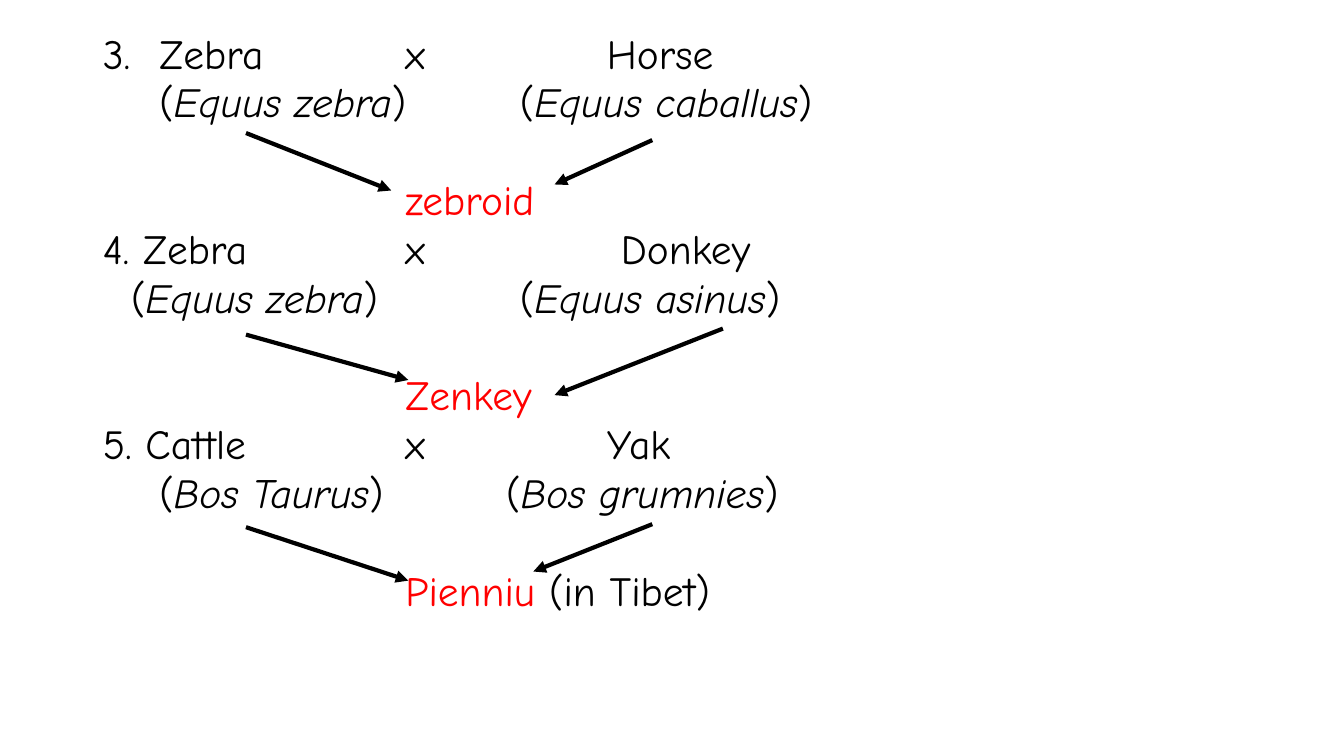
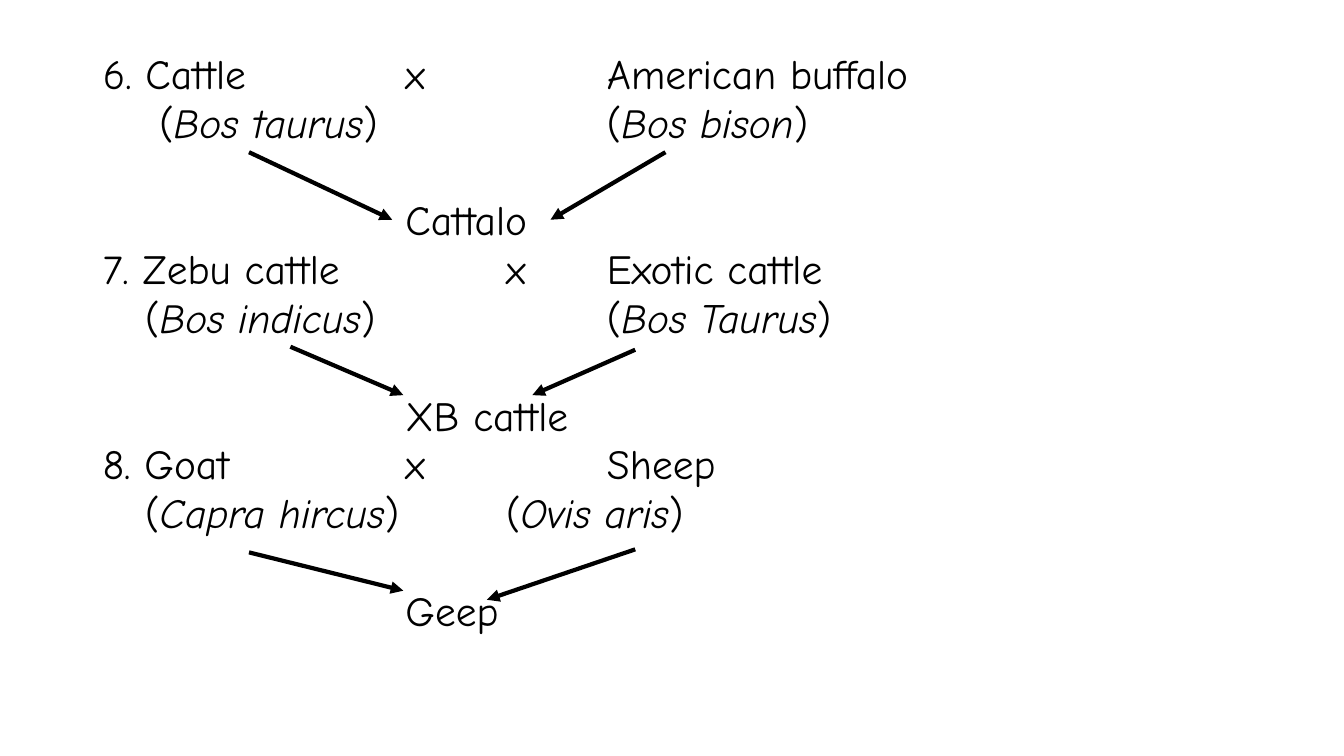
from dataclasses import dataclass

from lxml.etree import SubElement
from pptx import Presentation
from pptx.dml.color import RGBColor
from pptx.enum.shapes import MSO_CONNECTOR
from pptx.enum.text import MSO_ANCHOR, MSO_AUTO_SIZE
from pptx.oxml.ns import qn
from pptx.util import Inches, Pt


@dataclass(frozen=True)
class Theme:
    face: str = "Comic Neue"
    size: float = 29.6
    ink: str = "000000"
    red: str = "FF0000"
    width: float = 3
    lines: float = 0.7
    gap: float = 10
    drop: float = 44.9
    hang: float = 0.56
    tab: float = 1


def apply(item, values):
    for key, value in values.items():
        setattr(item, key, value)


class Deck:
    def __init__(self, theme):
        self.theme = theme
        self.file = Presentation()
        apply(self.file, {"slide_width": Inches(13.33),
                          "slide_height": Inches(7.5)})
        self.slide = None
        self.frame = None

    def page(self, top):
        self.slide = self.file.slides.add_slide(self.file.slide_layouts[1])
        title = self.slide.shapes.title.element
        title.getparent().remove(title)
        body = self.slide.placeholders[1]
        apply(body, {"left": Inches(0.92), "top": Inches(top),
                     "width": Inches(11.5), "height": Inches(6.75 - top)})
        self.frame = body.text_frame
        apply(self.frame, {"word_wrap": True,
                           "auto_size": MSO_AUTO_SIZE.NONE,
                           "vertical_anchor": MSO_ANCHOR.TOP})

    def row(self, runs, gap, first=0, start=None):
        para = self.frame.paragraphs[0]
        if para.runs:
            para = self.frame.add_paragraph()
        else:
            gap = 0
        hang = self.theme.hang if start else 0
        props = para._p.get_or_add_pPr()
        for key, value in {"marL": hang, "indent": first - hang,
                           "defTabSz": self.theme.tab}.items():
            props.set(key, str(Inches(value)))
        if start:
            SubElement(props, qn("a:buFont"), typeface=self.theme.face)
            SubElement(props, qn("a:buAutoNum"), type="arabicPeriod",
                       startAt=str(start))
        else:
            SubElement(props, qn("a:buNone"))
        apply(para, {"line_spacing": self.theme.lines,
                     "space_before": Pt(gap), "space_after": Pt(0)})
        for text, slant, color in runs:
            run = para.add_run()
            run.text = text
            apply(run.font, {"name": self.theme.face,
                             "size": Pt(self.theme.size),
                             "italic": slant, "bold": False})
            run.font.color.rgb = RGBColor.from_string(color)

    def cross(self, head, first, kinds, space, child, color,
              note="", start=None):
        ink, gap = self.theme.ink, self.theme.gap
        self.row([(head, False, ink)], gap, start=start)
        left, right = kinds
        self.row([("(", False, ink), (left, True, ink),
                  (")" + space + "(", False, ink), (right, True, ink),
                  (")", False, ink)], gap, first)
        runs = [(child, False, color)]
        if note:
            runs.append((note, False, ink))
        self.row(runs, self.theme.drop, 3)

    def arrow(self, *ends):
        link = self.slide.shapes.add_connector(
            MSO_CONNECTOR.STRAIGHT, *map(Inches, ends))
        link.line.width = Pt(self.theme.width)
        link.line.color.rgb = RGBColor.from_string(self.theme.ink)
        props = link._element.spPr
        SubElement(props.find(qn("a:ln")), qn("a:tailEnd"), type="triangle")
        SubElement(props, qn("a:effectLst"))


def main():
    theme = Theme()
    ink, red = theme.ink, theme.red
    pages = [
        (0.36, [
            ("Zebra\t\tx\t\tHorse", 0.56,
             ("Equus zebra", "Equus caballus"), " \t ",
             "zebroid", red, "", 3),
            ("4. Zebra\t\tx\t\t Donkey", 0.28,
             ("Equus zebra", "Equus asinus"), "\t\t ", "Zenkey", red),
            ("5. Cattle\t\tx\t\tYak", 0.56,
             ("Bos Taurus", "Bos grumnies"), "\t\t",
             "Pienniu", red, " (in Tibet)"),
        ], [
            (2.44, 1.32, 3.88, 1.89), (6.47, 1.39, 5.5, 1.83),
            (2.44, 3.32, 4.05, 3.77), (7.17, 3.26, 5.5, 3.92),
            (2.44, 5.23, 4.05, 5.76), (6.47, 5.2, 5.29, 5.67),
        ]),
        (0.56, [
            ("6. Cattle\t\tx\t\tAmerican buffalo", 0.56,
             ("Bos taurus", "Bos bison"), "\t\t\t", "Cattalo", ink),
            ("7. Zebu cattle\t\tx\tExotic cattle", 0.42,
             ("Bos indicus", "Bos Taurus"), "\t\t\t", "XB cattle", ink),
            ("8. Goat\t\tx\t\tSheep", 0.42,
             ("Capra hircus", "Ovis aris"), "\t\t", "Geep", ink),
        ], [
            (2.47, 1.51, 3.89, 2.18), (6.6, 1.51, 5.46, 2.18),
            (2.88, 3.44, 4, 3.92), (6.3, 3.47, 5.28, 3.92),
            (2.47, 5.48, 4, 5.86), (6.3, 5.45, 4.83, 5.95),
        ]),
    ]
    deck = Deck(theme)
    for top, pairs, links in pages:
        deck.page(top)
        for pair in pairs:
            deck.cross(*pair)
        for link in links:
            deck.arrow(*link)
    deck.file.save("out.pptx")


if __name__ == "__main__":
    main()
